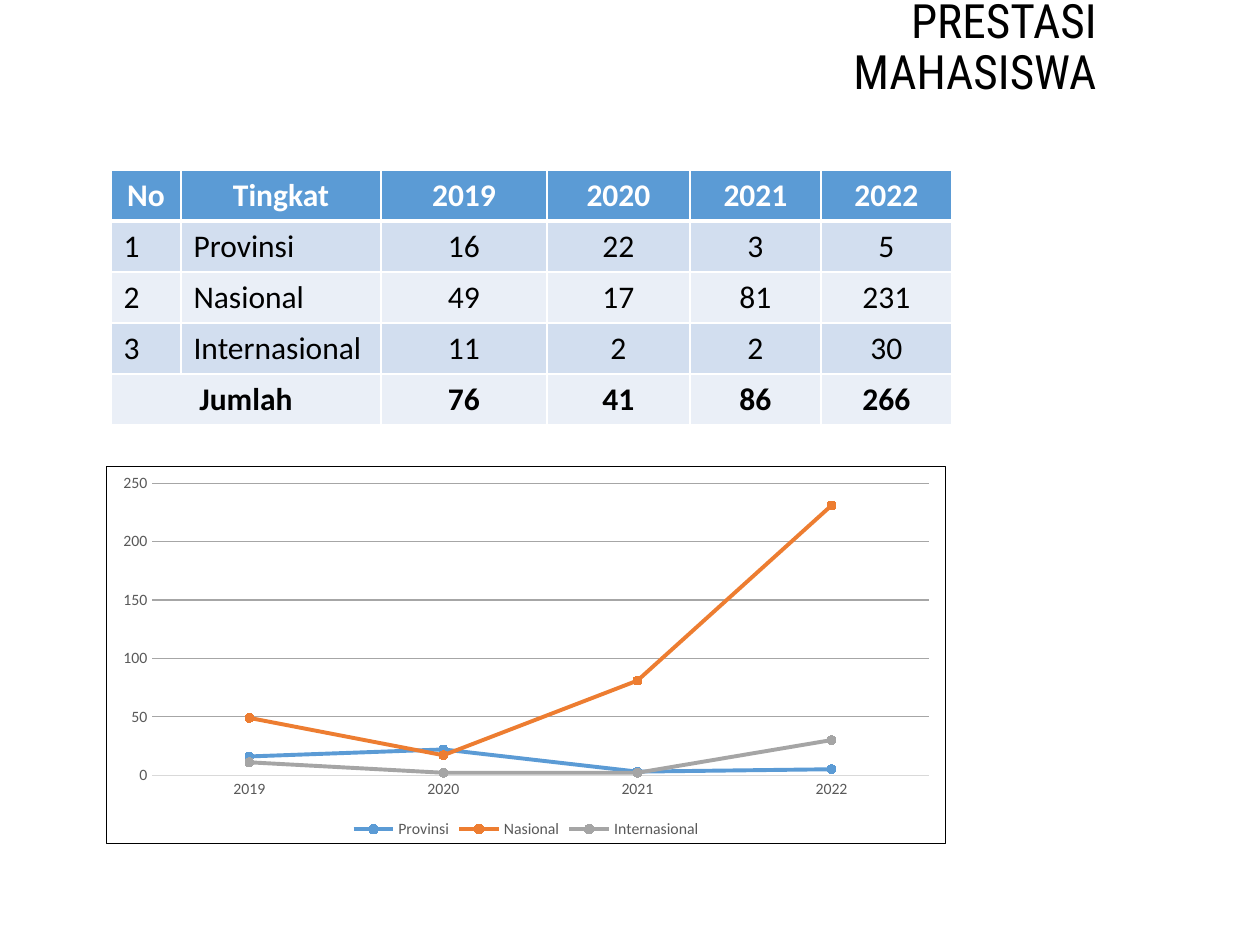
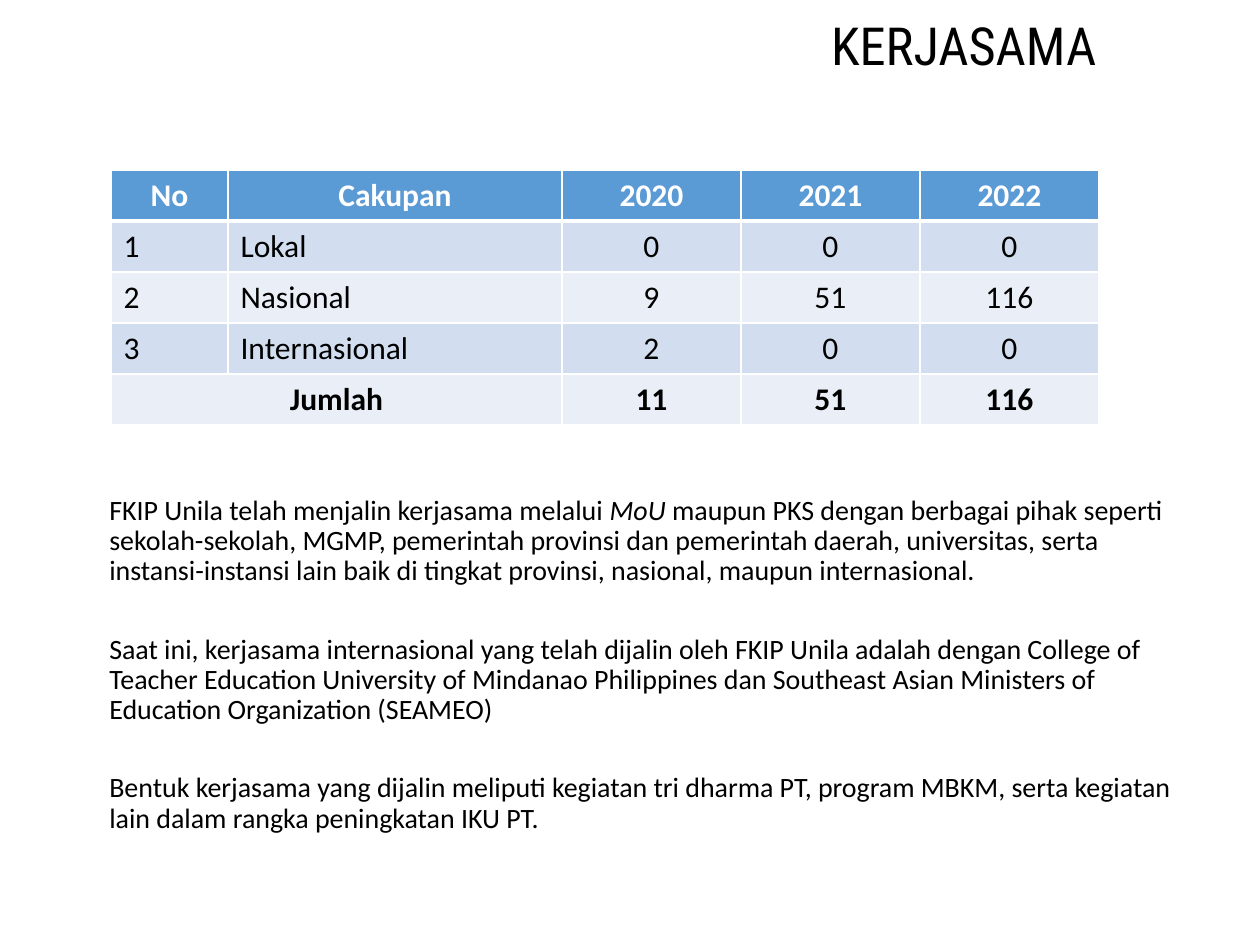
from dataclasses import dataclass

from lxml import etree
from pptx import Presentation
from pptx.chart.data import CategoryChartData
from pptx.dml.color import RGBColor
from pptx.enum.chart import XL_CHART_TYPE as ChartType
from pptx.enum.chart import XL_LEGEND_POSITION as LegendPosition
from pptx.enum.chart import XL_MARKER_STYLE as MarkerStyle
from pptx.enum.chart import XL_TICK_MARK as TickMark
from pptx.enum.text import MSO_ANCHOR as Anchor
from pptx.enum.text import PP_ALIGN as Align
from pptx.oxml import parse_xml
from pptx.oxml.ns import nsdecls, qn
from pptx.util import Pt

PX = 914400 / 126


@dataclass(frozen=True)
class Theme:
    black: RGBColor = RGBColor.from_string("000000")
    white: RGBColor = RGBColor.from_string("FFFFFF")
    header: RGBColor = RGBColor.from_string("5B9BD5")
    bands: tuple = (RGBColor.from_string("D2DEEF"), RGBColor.from_string("EAEFF7"))
    series: tuple = tuple(RGBColor.from_string(c) for c in ("5B9BD5", "ED7D31", "A5A5A5"))
    chart_text: RGBColor = RGBColor.from_string("595959")
    axis: RGBColor = RGBColor.from_string("D9D9D9")
    grid: RGBColor = RGBColor.from_string("A6A6A6")
    title_font: str = "Roboto Condensed"
    body_font: str = "Calibri"
    table_size: Pt = Pt(18)
    body_size: Pt = Pt(16)
    chart_size: Pt = Pt(9)


theme = Theme()


def px(*lengths):
    """Turn pixel lengths into EMU."""
    return [round(length * PX) for length in lengths]


def add_record_table(slide, label, years, records, widths):
    """Table of numbered records per year, closed by a row of totals."""
    totals = [sum(column) for column in zip(*records.values())]
    rows = [["No", label, *years]]
    rows += [[number, name, *values] for number, (name, values) in enumerate(records.items(), 1)]
    rows.append(["Jumlah", "", *totals])
    last = len(rows) - 1
    row_height = 51
    frame = slide.shapes.add_table(len(rows), len(widths),
                                   *px(111, 170, sum(widths), row_height * len(rows)))
    table = frame.table
    table.horz_banding = False
    for column, width in zip(table.columns, px(*widths)):
        column.width = width
    for row in table.rows:
        row.height = px(row_height)[0]
    table.cell(last, 0).merge(table.cell(last, 1))

    for r, row in enumerate(rows):
        for c, value in enumerate(row):
            cell = table.cell(r, c)
            properties = cell._tc.get_or_add_tcPr()
            for side in "LRTB":
                below_header = (r, side) in ((0, "B"), (1, "T"))
                properties.append(parse_xml(
                    f'<a:ln{side} {nsdecls("a")} w="{Pt(3 if below_header else 1)}">'
                    f'<a:solidFill><a:srgbClr val="{theme.white}"/></a:solidFill></a:ln{side}>'))
            cell.fill.solid()
            cell.fill.fore_color.rgb = theme.bands[(r - 1) % 2] if r else theme.header
            if cell.is_spanned:
                continue
            cell.text = str(value)
            paragraph = cell.text_frame.paragraphs[0]
            paragraph.alignment = Align.LEFT if c < 2 and 0 < r < last else Align.CENTER
            font = paragraph.font
            font.name, font.size, font.bold = theme.body_font, theme.table_size, r in (0, last)
            font.color.rgb = theme.black if r else theme.white


presentation = Presentation()
presentation.slide_width, presentation.slide_height = px(1260, 945)

slides = []
for title, size in (("PRESTASI MAHASISWA", 27), ("KERJASAMA", 30)):
    slide = presentation.slides.add_slide(presentation.slide_layouts[6])
    slides.append(slide)
    text_frame = slide.shapes.add_textbox(*px(687, 14, 422, 70)).text_frame
    text_frame.word_wrap = True
    text_frame.vertical_anchor = Anchor.MIDDLE
    paragraph = text_frame.paragraphs[0]
    paragraph.text = title
    paragraph.alignment = Align.RIGHT
    paragraph.line_spacing = 0.9
    paragraph.font.name, paragraph.font.size = theme.title_font, Pt(size)
    paragraph.font.color.rgb = theme.black
achievement_slide, partnership_slide = slides

# Student achievements: table and line chart of the same numbers
years = ["2019", "2020", "2021", "2022"]
achievements = {
    "Provinsi": [16, 22, 3, 5],
    "Nasional": [49, 17, 81, 231],
    "Internasional": [11, 2, 2, 30],
}
add_record_table(achievement_slide, "Tingkat", years, achievements,
                 [70, 200, 166, 143, 131, 131])

chart_data = CategoryChartData()
chart_data.categories = years
for name, values in achievements.items():
    chart_data.add_series(name, values)
chart = achievement_slide.shapes.add_chart(
    ChartType.LINE_MARKERS, *px(106, 466, 840, 378), chart_data).chart
chart.has_title = False
chart.font.name, chart.font.size = theme.body_font, theme.chart_size
chart.font.color.rgb = theme.chart_text
chart.has_legend = True
chart.legend.position = LegendPosition.BOTTOM
chart.legend.include_in_layout = False
chart.plots[0].vary_by_categories = False

for axis in (chart.category_axis, chart.value_axis):
    axis.major_tick_mark = axis.minor_tick_mark = TickMark.NONE
chart.category_axis.format.line.color.rgb = theme.axis
chart.category_axis.format.line.width = Pt(0.75)
value_axis = chart.value_axis
value_axis.minimum_scale, value_axis.maximum_scale, value_axis.major_unit = 0, 250, 50
value_axis.format.line.fill.background()
value_axis.major_gridlines.format.line.color.rgb = theme.grid
value_axis.major_gridlines.format.line.width = Pt(0.75)

for series, color in zip(chart.plots[0].series, theme.series):
    series.smooth = False
    series.format.line.color.rgb = color
    series.format.line.width = Pt(2.25)
    marker = series.marker
    marker.style, marker.size = MarkerStyle.CIRCLE, 5
    marker.format.fill.solid()
    marker.format.fill.fore_color.rgb = color
    marker.format.line.color.rgb = color

chart_space = chart.element
corners = etree.Element(qn("c:roundedCorners"), val="0")
chart_space.find(qn("c:date1904")).addnext(corners)
chart_space.find(qn("c:chart")).addnext(parse_xml(
    f'<c:spPr {nsdecls("c", "a")}>'
    f'<a:solidFill><a:srgbClr val="{theme.white}"/></a:solidFill>'
    f'<a:ln w="{Pt(0.75)}"><a:solidFill><a:srgbClr val="{theme.black}"/></a:solidFill></a:ln>'
    '</c:spPr>'))

# Partnerships: table and explanation
partnerships = {
    "Lokal": [0, 0, 0],
    "Nasional": [9, 51, 116],
    "Internasional": [2, 0, 0],
}
add_record_table(partnership_slide, "Cakupan", years[1:], partnerships,
                 [117, 334, 179, 179, 179])

explanation = [
    ["FKIP Unila telah menjalin kerjasama melalui ", "MoU",
     " maupun PKS dengan berbagai pihak seperti sekolah-sekolah, MGMP, pemerintah provinsi "
     "dan pemerintah daerah, universitas, serta instansi-instansi lain baik di tingkat "
     "provinsi, nasional, maupun internasional."],
    ["Saat ini, kerjasama internasional yang telah dijalin oleh FKIP Unila adalah dengan "
     "College of Teacher Education University of Mindanao Philippines dan Southeast Asian "
     "Ministers of Education Organization (SEAMEO)"],
    ["Bentuk kerjasama yang dijalin meliputi kegiatan tri dharma PT, program MBKM, serta "
     "kegiatan lain dalam rangka peningkatan IKU PT."],
]
text_frame = partnership_slide.shapes.add_textbox(*px(97, 490, 1110, 382)).text_frame
text_frame.word_wrap = True
for index, texts in enumerate(explanation):
    paragraph = text_frame.add_paragraph() if index else text_frame.paragraphs[0]
    paragraph.line_spacing = 0.9
    if index:
        paragraph.space_before = Pt(27.5)
    paragraph.font.name, paragraph.font.size = theme.body_font, theme.body_size
    paragraph.font.color.rgb = theme.black
    for text in texts:
        run = paragraph.add_run()
        run.text = text
        if text == "MoU":
            run.font.italic = True

presentation.save("out.pptx")
